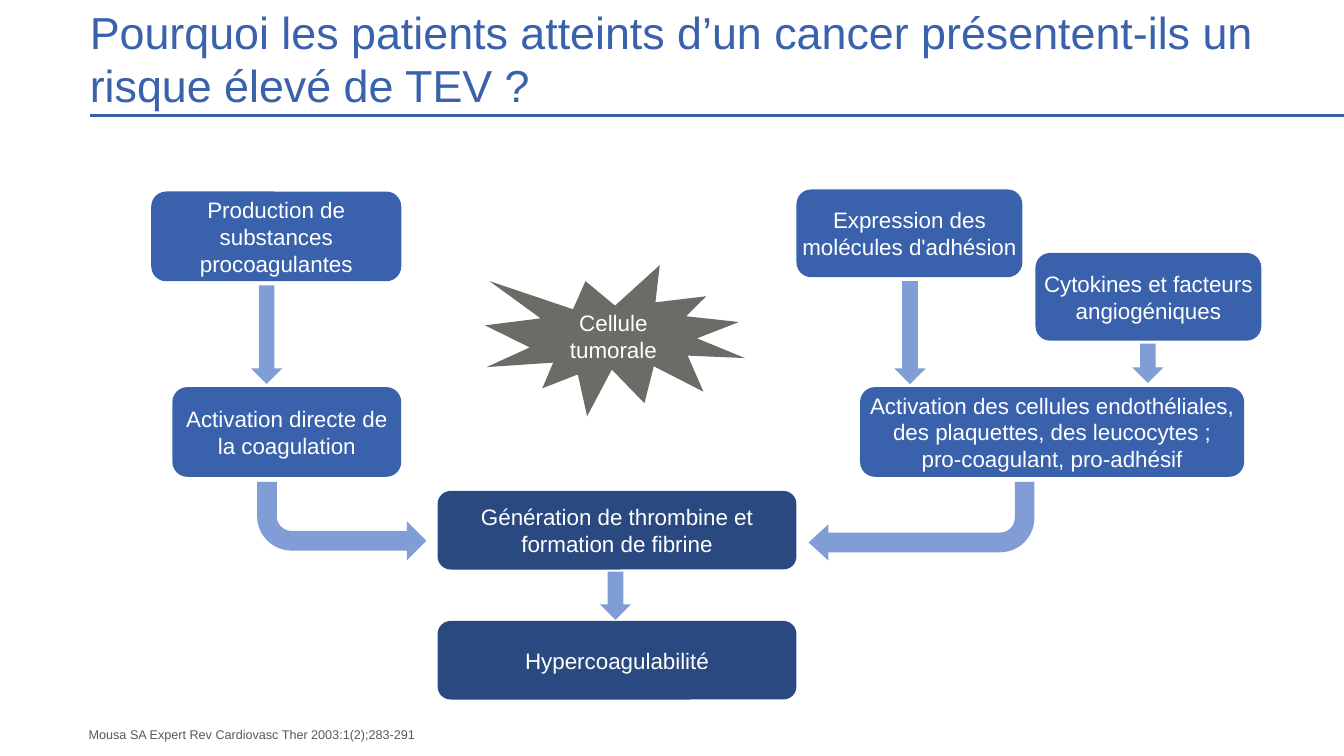
"""Build the slide on why cancer patients have a high risk of VTE."""
import pptx
import pptx.dml.color
import pptx.enum.shapes
import pptx.enum.text
import pptx.oxml.ns
import pptx.util
from lxml import etree

Inches = pptx.util.Inches
SHAPES = pptx.enum.shapes.MSO_SHAPE
ANCHOR = pptx.enum.text.MSO_ANCHOR
ALIGN = pptx.enum.text.PP_ALIGN
COLORS = {
    "blue": "3961AC",
    "navy": "2B4981",
    "light_blue": "809ED5",
    "gray": "6D6B66",
    "white": "FFFFFF",
    "dark_gray": "595959",
}


def write_text(shape, text, size=16, color="white", align=ALIGN.CENTER, anchor=ANCHOR.MIDDLE):
    frame = shape.text_frame
    frame.word_wrap = True
    frame.vertical_anchor = anchor
    frame.margin_left = frame.margin_right = frame.margin_top = frame.margin_bottom = 0
    paragraph = frame.paragraphs[0]
    paragraph.text = text
    paragraph.alignment = align
    paragraph.font.name = "Arial"
    paragraph.font.size = pptx.util.Pt(size)
    paragraph.font.color.rgb = pptx.dml.color.RGBColor.from_string(COLORS[color])


def add_filled_shape(kind, left, top, width, height, color):
    shape = slide.shapes.add_shape(kind, Inches(left), Inches(top), Inches(width), Inches(height))
    shape.shadow.inherit = False
    shape.fill.solid()
    shape.fill.fore_color.rgb = pptx.dml.color.RGBColor.from_string(COLORS[color])
    shape.line.fill.background()
    return shape


presentation = pptx.Presentation()
presentation.slide_width = Inches(13.33)
presentation.slide_height = Inches(7.5)
slide = presentation.slides.add_slide(presentation.slide_layouts[6])

title_rule = slide.shapes.add_connector(
    pptx.enum.shapes.MSO_CONNECTOR.STRAIGHT, Inches(0.89), Inches(1.15), Inches(13.33), Inches(1.15)
)
title_rule.line.color.rgb = pptx.dml.color.RGBColor.from_string(COLORS["blue"])
title_rule.line.width = pptx.util.Pt(2.25)
etree.SubElement(title_rule._element.spPr, pptx.oxml.ns.qn("a:effectLst"))

title = slide.shapes.add_textbox(Inches(0.89), Inches(0.04), Inches(12.08), Inches(1.07))
write_text(
    title,
    "Pourquoi les patients atteints d’un cancer présentent-ils un risque élevé de TEV ?",
    size=32, color="blue", align=ALIGN.LEFT, anchor=ANCHOR.BOTTOM,
)

boxes = [
    ("Production de substances procoagulantes", 1.5, 1.9, 2.48, 0.89, "blue"),
    ("Activation directe de la coagulation", 1.71, 3.84, 2.27, 0.89, "blue"),
    ("Expression des molécules d'adhésion", 7.9, 1.88, 2.24, 0.87, "blue"),
    ("Cytokines et facteurs angiogéniques", 10.27, 2.51, 2.24, 0.87, "blue"),
    ("Activation des cellules endothéliales, des plaquettes, des leucocytes ;\v"
     "pro-coagulant, pro-adhésif", 8.53, 3.84, 3.81, 0.89, "blue"),
    ("Génération de thrombine et formation de fibrine", 4.34, 4.87, 3.56, 0.78, "navy"),
    ("Hypercoagulabilité", 4.34, 6.16, 3.56, 0.78, "navy"),
]
for text, left, top, width, height, color in boxes:
    box = add_filled_shape(SHAPES.ROUNDED_RECTANGLE, left, top, width, height, color)
    write_text(box, text)

tumor_cell = add_filled_shape(SHAPES.EXPLOSION1, 4.81, 2.63, 2.58, 1.5, "gray")
write_text(tumor_cell, "Cellule tumorale")

for left, top, height in [(2.49, 2.83, 0.98), (8.87, 2.79, 1.02), (11.23, 3.41, 0.39), (5.95, 5.67, 0.48)]:
    add_filled_shape(SHAPES.DOWN_ARROW, left, top, 0.31, height, "light_blue")

left_bent_arrow = add_filled_shape(SHAPES.BENT_ARROW, 2.55, 4.78, 1.68, 0.78, "light_blue")
left_bent_arrow._element.spPr.find(pptx.oxml.ns.qn("a:xfrm")).set("flipV", "1")

right_bent_arrow = add_filled_shape(SHAPES.BENT_ARROW, 8.02, 4.78, 2.24, 0.78, "light_blue")
right_bent_arrow.rotation = 180
right_bent_arrow.adjustments[1] = 0.229

citation = slide.shapes.add_textbox(Inches(0.88), Inches(7.21), Inches(9.84), Inches(0.15))
write_text(
    citation, "Mousa SA Expert Rev Cardiovasc Ther 2003:1(2);283-291",
    size=9, color="dark_gray", align=ALIGN.LEFT, anchor=ANCHOR.BOTTOM,
)

presentation.save("out.pptx")
